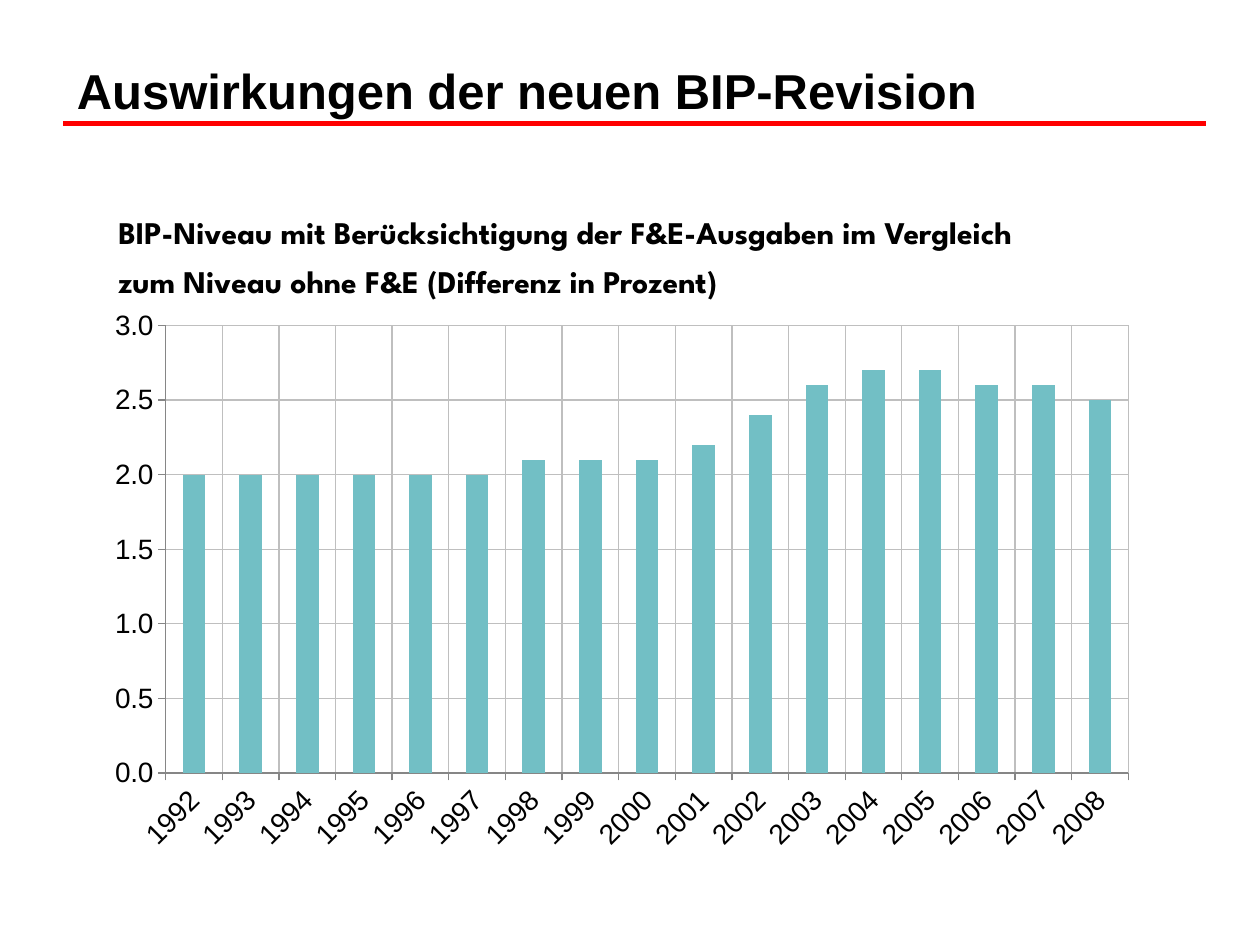
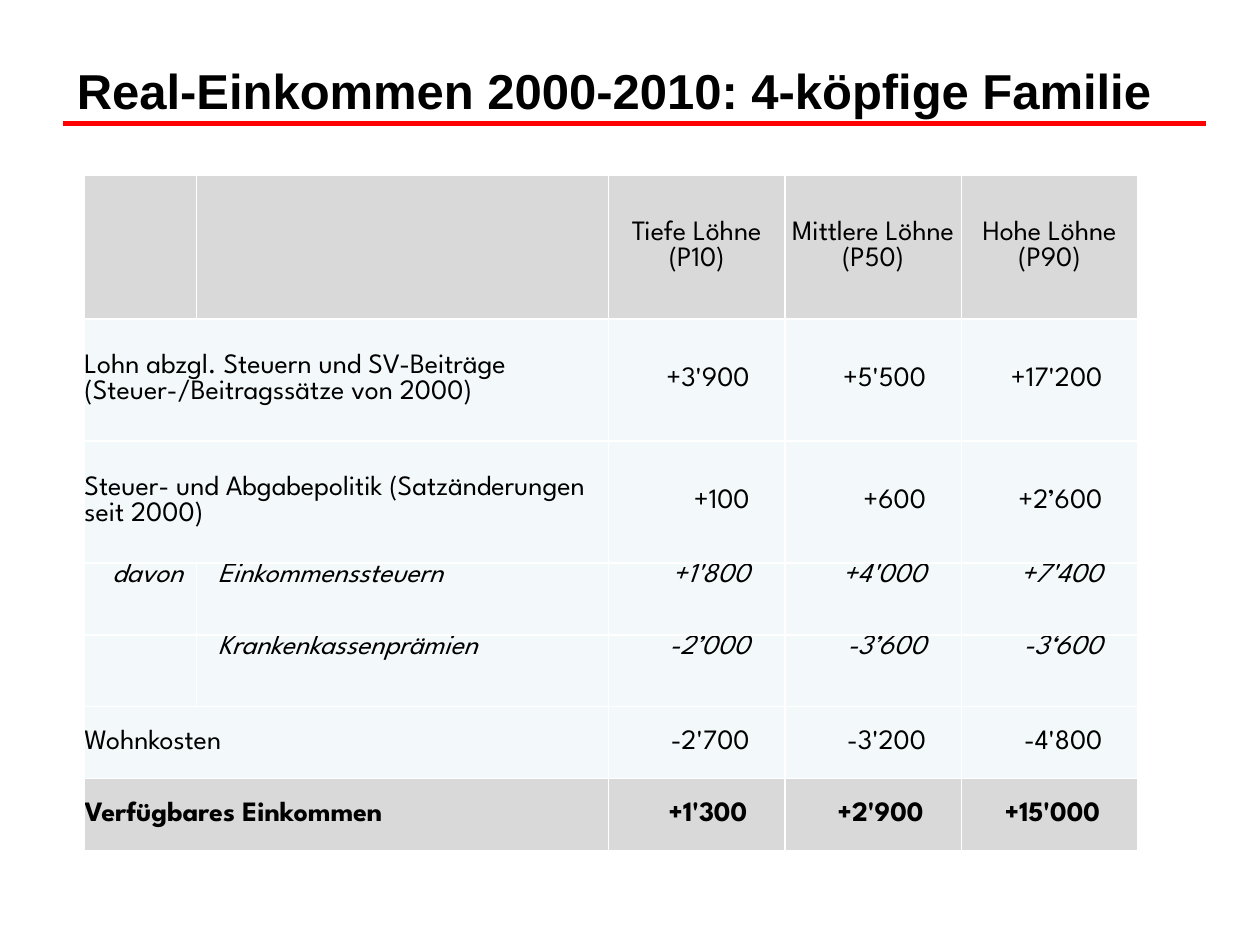
from dataclasses import dataclass

from lxml import etree
from pptx import Presentation
from pptx.chart.chart import Chart
from pptx.chart.data import CategoryChartData
from pptx.dml.color import RGBColor
from pptx.enum.chart import XL_CHART_TYPE as ChartType, XL_TICK_LABEL_POSITION as LabelPosition
from pptx.enum.chart import XL_TICK_MARK as TickMark
from pptx.enum.shapes import MSO_CONNECTOR as Connector
from pptx.enum.text import MSO_ANCHOR as Anchor, MSO_AUTO_SIZE as AutoSize, PP_ALIGN as Align
from pptx.oxml import parse_xml
from pptx.oxml.ns import nsdecls, qn
from pptx.slide import Slide
from pptx.table import _Cell as Cell
from pptx.text.text import Font
from pptx.util import Inches, Pt

# Shared look
BLACK = RGBColor(0x00, 0x00, 0x00)
WHITE = RGBColor(0xFF, 0xFF, 0xFF)
RED = RGBColor(0xFF, 0x00, 0x00)
TEAL = RGBColor(0x72, 0xBF, 0xC5)
GRID_GREY = RGBColor(0xBF, 0xBF, 0xBF)
AXIS_GREY = RGBColor(0x86, 0x86, 0x86)
BAND_GREY = RGBColor(0xD9, 0xD9, 0xD9)
PALE_TEAL = RGBColor(0xF3, 0xF9, 0xFA)
TITLE_FONT = "Arial"
TEXT_FONT = "League Spartan"
TITLE_ONLY = 5


@dataclass
class IncomeRow:
    height: float
    labels: tuple[str, ...]  # one label spans both label columns
    amounts: tuple[str, str, str]
    fill: RGBColor = PALE_TEAL
    bold: bool = False
    italic: bool = False
    anchor: Anchor = Anchor.MIDDLE
    amount_align: Align = Align.RIGHT
    amount_margin: float = 0.28


# Slide content
FIRST_YEAR = 1992
GDP_DIFFERENCES = (2, 2, 2, 2, 2, 2, 2.1, 2.1, 2.1, 2.2, 2.4, 2.6, 2.7, 2.7, 2.6, 2.6, 2.5)

COLUMN_WIDTHS = (0.89, 3.27, 1.4, 1.4, 1.4)
LABEL_INDENTS = (0.22, 0.17)
INCOME_ROWS = (
    IncomeRow(1.14, ("", ""), ("Tiefe Löhne (P10)", "Mittlere Löhne (P50)", "Hohe Löhne (P90)"),
              BAND_GREY, amount_align=Align.CENTER, amount_margin=0),
    IncomeRow(0.97, ("Lohn abzgl. Steuern und SV-Beiträge (Steuer-/Beitragssätze von 2000)",),
              ("+3'900", "+5'500", "+17'200")),
    IncomeRow(0.97, ("Steuer- und Abgabepolitik (Satzänderungen seit 2000)",),
              ("+100", "+600", "+2’600")),
    IncomeRow(0.57, ("davon", "Einkommenssteuern"), ("+1'800", "+4'000", "+7'400"),
              italic=True, anchor=Anchor.TOP),
    IncomeRow(0.57, ("", "Krankenkassenprämien"), ("-2’000", "-3’600", "-3‘600"),
              italic=True, anchor=Anchor.TOP),
    IncomeRow(0.57, ("Wohnkosten",), ("-2'700", "-3'200", "-4'800")),
    IncomeRow(0.57, ("Verfügbares Einkommen",), ("+1'300", "+2'900", "+15'000"),
              BAND_GREY, bold=True, amount_margin=0.3),
)


def style_font(font: Font, name: str, size: float, bold: bool = False, italic: bool = False) -> None:
    font.name, font.size = name, Pt(size)
    font.bold, font.italic = bold, italic
    font.color.rgb = BLACK


def add_titled_slide(prs: Presentation, heading: str) -> Slide:
    slide = prs.slides.add_slide(prs.slide_layouts[TITLE_ONLY])
    title = slide.shapes.title
    title.left, title.top = Inches(0.51), Inches(0.28)
    title.width, title.height = Inches(9), Inches(0.87)
    frame = title.text_frame
    frame.text = heading
    frame.auto_size = AutoSize.NONE
    frame.vertical_anchor = Anchor.MIDDLE
    frame.paragraphs[0].alignment = Align.LEFT
    style_font(frame.paragraphs[0].runs[0].font, TITLE_FONT, 28, bold=True)

    # Red rule under the title
    rule = slide.shapes.add_connector(
        Connector.STRAIGHT, Inches(0.5), Inches(0.98), Inches(9.57), Inches(0.98))
    rule.line.color.rgb = RED
    rule.line.width = Pt(2.5)
    etree.SubElement(rule._element.spPr, qn("a:effectLst"))
    return slide


def frame_chart(chart: Chart, x: float, y: float, w: float, h: float) -> None:
    """Place the inner plot area and give the chart a white border."""
    plot_area = chart.element.find(".//" + qn("c:plotArea"))
    for layout in plot_area.findall(qn("c:layout")):
        plot_area.remove(layout)
    plot_area.insert(0, parse_xml(
        f'<c:layout {nsdecls("c")}><c:manualLayout><c:layoutTarget val="inner"/>'
        f'<c:xMode val="edge"/><c:yMode val="edge"/><c:x val="{x}"/><c:y val="{y}"/>'
        f'<c:w val="{w}"/><c:h val="{h}"/></c:manualLayout></c:layout>'))
    chart.element.find(qn("c:chart")).addnext(parse_xml(
        f'<c:spPr {nsdecls("c", "a")}><a:noFill/><a:ln w="{Pt(0.75)}"><a:solidFill>'
        f'<a:srgbClr val="{WHITE}"/></a:solidFill></a:ln></c:spPr>'))


def add_gdp_chart(slide: Slide) -> None:
    data = CategoryChartData()
    data.categories = [str(FIRST_YEAR + i) for i in range(len(GDP_DIFFERENCES))]
    data.add_series("Series 1", GDP_DIFFERENCES)
    chart = slide.shapes.add_chart(ChartType.COLUMN_CLUSTERED, Inches(0.51), Inches(2.1),
                                   Inches(9), Inches(4.95), data).chart
    chart.has_title = chart.has_legend = False
    style_font(chart.font, TITLE_FONT, 16)

    columns = chart.plots[0]
    columns.gap_width = 150
    columns.vary_by_categories = False
    fill = columns.series[0].format.fill
    fill.solid()
    fill.fore_color.rgb = TEAL

    years, percent = chart.category_axis, chart.value_axis
    for axis in (years, percent):
        axis.has_major_gridlines = True
        axis.major_tick_mark = TickMark.OUTSIDE
        axis.minor_tick_mark = TickMark.NONE
        for line, color in ((axis.major_gridlines.format.line, GRID_GREY),
                            (axis.format.line, AXIS_GREY)):
            line.color.rgb = color
            line.width = Pt(0.75)
        style_font(axis.tick_labels.font, TITLE_FONT, 16)
    years.tick_label_position = LabelPosition.LOW
    years._element.find(qn("c:txPr")).find(qn("a:bodyPr")).set("rot", "-2700000")
    percent.minimum_scale, percent.maximum_scale, percent.major_unit = 0, 3, 0.5
    percent.tick_labels.number_format = "#,##0.0"
    percent.tick_labels.number_format_is_linked = False
    frame_chart(chart, 0.089, 0.097, 0.85, 0.719)


def add_chart_caption(slide: Slide, caption: str) -> None:
    frame = slide.shapes.add_textbox(
        Inches(0.84), Inches(1.55), Inches(7.48), Inches(0.71)).text_frame
    frame.word_wrap = True
    frame.text = caption
    frame.paragraphs[0].line_spacing = 1.3
    style_font(frame.paragraphs[0].runs[0].font, TEXT_FONT, 18, bold=True)


def paint_cell(cell: Cell, color: RGBColor) -> None:
    cell.fill.solid()
    cell.fill.fore_color.rgb = color
    for position, side in enumerate(("lnL", "lnR", "lnT", "lnB")):
        cell._tc.get_or_add_tcPr().insert(position, parse_xml(
            f'<a:{side} {nsdecls("a")} w="{Pt(1)}"><a:solidFill>'
            f'<a:srgbClr val="{WHITE}"/></a:solidFill></a:{side}>'))


def write_cell(cell: Cell, text: str, row: IncomeRow, align: Align,
               left: float = 0, right: float = 0) -> None:
    cell.margin_top = cell.margin_bottom = 0
    cell.margin_left, cell.margin_right = Inches(left), Inches(right)
    cell.vertical_anchor = row.anchor
    cell.text = text
    paragraph = cell.text_frame.paragraphs[0]
    paragraph.alignment = align
    style_font(paragraph.font, TEXT_FONT, 16, row.bold, row.italic)
    for run in paragraph.runs:
        style_font(run.font, TEXT_FONT, 16, row.bold, row.italic)


def add_income_table(slide: Slide) -> None:
    table = slide.shapes.add_table(
        len(INCOME_ROWS), len(COLUMN_WIDTHS), Inches(0.67), Inches(1.39),
        Inches(sum(COLUMN_WIDTHS)), Inches(sum(row.height for row in INCOME_ROWS))).table
    table.first_row = table.horz_banding = False
    for column, width in zip(table.columns, COLUMN_WIDTHS):
        column.width = Inches(width)
    for r, row in enumerate(INCOME_ROWS):
        table.rows[r].height = Inches(row.height)
        for c in range(len(COLUMN_WIDTHS)):
            paint_cell(table.cell(r, c), row.fill)
        spans = len(row.labels) == 1
        if spans:
            table.cell(r, 0).merge(table.cell(r, 1))
        for c, label in enumerate(row.labels):
            write_cell(table.cell(r, c), label, row, Align.LEFT,
                       left=0 if spans else LABEL_INDENTS[c])
        for c, amount in enumerate(row.amounts, start=2):
            write_cell(table.cell(r, c), amount, row, row.amount_align, right=row.amount_margin)


def main() -> None:
    prs = Presentation()
    prs.slide_width, prs.slide_height = Inches(10), Inches(7.5)

    # Slide 1: GDP revision
    revision = add_titled_slide(prs, "Auswirkungen der neuen BIP-Revision")
    add_gdp_chart(revision)
    add_chart_caption(revision, "BIP-Niveau mit Berücksichtigung der F&E-Ausgaben im Vergleich "
                                "zum Niveau ohne F&E (Differenz in Prozent)")

    # Slide 2: real incomes
    incomes = add_titled_slide(prs, "Real-Einkommen 2000-2010: 4-köpfige Familie")
    add_income_table(incomes)

    prs.save("out.pptx")


if __name__ == "__main__":
    main()
